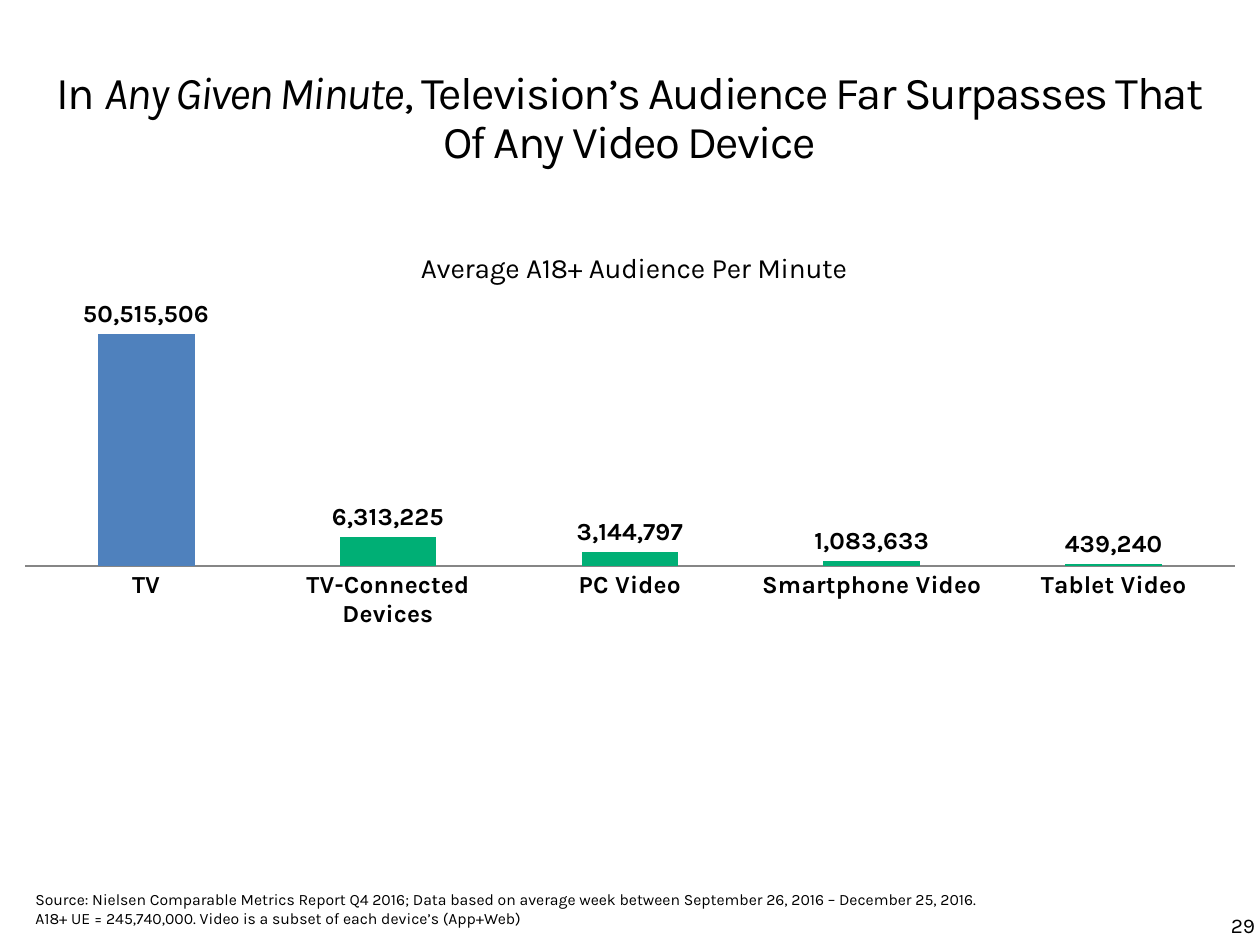
from typing import NamedTuple

import lxml.etree
import pptx
import pptx.chart.data
import pptx.dml.color
import pptx.enum.chart
import pptx.enum.text
import pptx.oxml.ns
import pptx.util
from pptx.util import Inches

FONT = "Karla"
COLORS = {"text": "000000", "tv": "4F81BD", "digital": "00AF75", "axis": "868686"}


class Audience(NamedTuple):
    device: str
    viewers: int
    color: str


AUDIENCES = [
    Audience("TV", 50515506, "tv"),
    Audience("TV-Connected Devices", 6313225, "digital"),
    Audience("PC Video", 3144797, "digital"),
    Audience("Smartphone Video", 1083633, "digital"),
    Audience("Tablet Video", 439240, "digital"),
]
TITLE_RUNS = [
    ("In ", False),
    ("Any Given Minute", True),
    (", Television’s Audience Far Surpasses That Of Any Video Device", False),
]
SOURCE = (
    "Source: Nielsen Comparable Metrics Report Q4 2016; Data based on average week "
    "between September 26, 2016 – December 25, 2016. "
    "A18+ UE = 245,740,000. Video is a subset of each device’s (App+Web)"
)


def rgb(name: str) -> pptx.dml.color.RGBColor:
    return pptx.dml.color.RGBColor.from_string(COLORS[name])


def style_font(font, size: float, bold: bool = False) -> None:
    font.name = FONT
    font.size = pptx.util.Pt(size)
    font.bold = bold
    font.color.rgb = rgb("text")


def place(shape, left: float, top: float, width: float, height: float) -> None:
    shape.left, shape.top = Inches(left), Inches(top)
    shape.width, shape.height = Inches(width), Inches(height)
    shape.text_frame.word_wrap = True
    shape.text_frame.auto_size = pptx.enum.text.MSO_AUTO_SIZE.NONE
    shape.text_frame.vertical_anchor = pptx.enum.text.MSO_ANCHOR.TOP


def manual_layout(**fractions: float):
    """Make a c:layout element from fractions of the chart's size."""
    tag = pptx.oxml.ns.qn
    layout = lxml.etree.Element(tag("c:layout"))
    manual = lxml.etree.SubElement(layout, tag("c:manualLayout"))
    if "w" in fractions:
        lxml.etree.SubElement(manual, tag("c:layoutTarget")).set("val", "inner")
    for mode in ("xMode", "yMode"):
        lxml.etree.SubElement(manual, tag(f"c:{mode}")).set("val", "edge")
    for name, value in fractions.items():
        lxml.etree.SubElement(manual, tag(f"c:{name}")).set("val", str(value))
    return layout


def remove_layout(element) -> None:
    for layout in element.findall(pptx.oxml.ns.qn("c:layout")):
        element.remove(layout)


def add_title(slide) -> None:
    title = slide.shapes.title
    place(title, 0.18, 0.5, 9.63, 1.4)
    paragraph = title.text_frame.paragraphs[0]
    paragraph.alignment = pptx.enum.text.PP_ALIGN.CENTER
    paragraph.line_spacing = pptx.util.Pt(28)
    for text, italic in TITLE_RUNS:
        run = paragraph.add_run()
        run.text = text
        style_font(run.font, 26)
        run.font.italic = italic
        run.font._element.set("spc", "-100")


def add_source(slide) -> None:
    body = slide.placeholders[1]
    place(body, 0.18, 7.01, 7.8, 0.38)
    body.text_frame.text = SOURCE
    paragraph = body.text_frame.paragraphs[0]
    properties = paragraph._p.get_or_add_pPr()
    properties.set("marL", "0")
    properties.set("indent", "0")
    lxml.etree.SubElement(properties, pptx.oxml.ns.qn("a:buNone"))
    paragraph.space_before = pptx.util.Pt(0)
    style_font(paragraph.runs[0].font, 9)


def add_audience_chart(slide) -> None:
    data = pptx.chart.data.CategoryChartData(number_format="#,##0")
    data.categories = [audience.device for audience in AUDIENCES]
    data.add_series("Series 1", [audience.viewers for audience in AUDIENCES])
    chart = slide.shapes.add_chart(
        pptx.enum.chart.XL_CHART_TYPE.COLUMN_CLUSTERED,
        Inches(0), Inches(1.78), Inches(10), Inches(3.27), data,
    ).chart
    style_font(chart.font, 18)
    chart.has_legend = False

    chart.has_title = True
    title = chart.chart_title
    title.text_frame.text = "Average A18+ Audience Per Minute"
    style_font(title.text_frame.paragraphs[0].runs[0].font, 16)
    title.include_in_layout = False
    remove_layout(title.element)
    title.element.find(pptx.oxml.ns.qn("c:tx")).addnext(manual_layout(x=0.33, y=0.05))

    plot_area = chart.element.find(".//" + pptx.oxml.ns.qn("c:plotArea"))
    remove_layout(plot_area)
    plot_area.insert(0, manual_layout(x=0.02, y=0.16, w=0.96, h=0.67))

    category_axis = chart.category_axis
    category_axis.major_tick_mark = pptx.enum.chart.XL_TICK_MARK.NONE
    category_axis.format.line.color.rgb = rgb("axis")
    category_axis.format.line.width = pptx.util.Pt(0.75)
    style_font(category_axis.tick_labels.font, 14, bold=True)
    value_axis = chart.value_axis
    value_axis.has_major_gridlines = False
    value_axis.minimum_scale, value_axis.maximum_scale = 0, 60_000_000
    value_axis.visible = False

    plot = chart.plots[0]
    plot.vary_by_categories = False
    plot.gap_width, plot.overlap = 150, -25
    series = plot.series[0]
    series.format.fill.solid()
    series.format.fill.fore_color.rgb = rgb("digital")
    for index, audience in enumerate(AUDIENCES):
        if audience.color != "digital":
            fill = series.points[index].format.fill
            fill.solid()
            fill.fore_color.rgb = rgb(audience.color)
    labels = series.data_labels
    labels.show_value = True
    labels.number_format, labels.number_format_is_linked = "#,##0", False
    labels.position = pptx.enum.chart.XL_LABEL_POSITION.OUTSIDE_END
    style_font(labels.font, 14, bold=True)


def add_page_number(slide) -> None:
    box = slide.shapes.add_textbox(0, 0, 0, 0)
    place(box, 9.67, 7.19, 0.41, 0.55)
    box.text_frame.word_wrap = False
    box.text_frame.text = "29"
    style_font(box.text_frame.paragraphs[0].runs[0].font, 12)


def main() -> None:
    presentation = pptx.Presentation()
    presentation.slide_width, presentation.slide_height = Inches(10), Inches(7.5)
    slide = presentation.slides.add_slide(presentation.slide_layouts[1])
    add_title(slide)
    add_source(slide)
    add_audience_chart(slide)
    add_page_number(slide)
    presentation.save("out.pptx")


if __name__ == "__main__":
    main()
